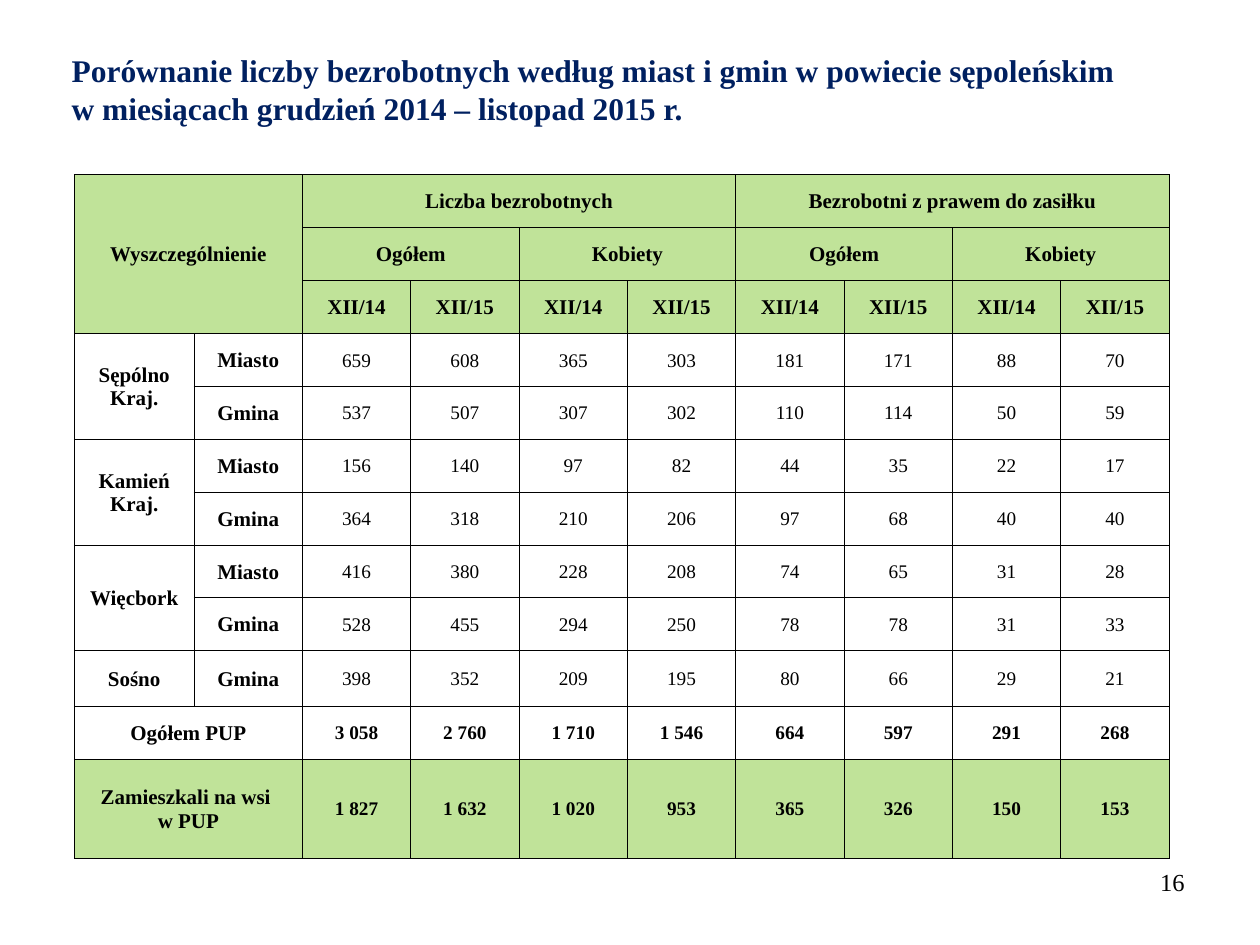
from lxml import etree
from pptx import Presentation
from pptx.dml.color import RGBColor
from pptx.enum.text import MSO_ANCHOR, PP_ALIGN
from pptx.oxml.ns import qn
from pptx.util import Emu, Inches, Pt

LEFT, CENTER, RIGHT = PP_ALIGN.LEFT, PP_ALIGN.CENTER, PP_ALIGN.RIGHT
MIDDLE = MSO_ANCHOR.MIDDLE

HEADER_ROWS = 3
LABEL_COLUMNS = 2
COLUMN_WIDTHS = [0.95] + [0.86] * 9
ROW_HEIGHTS = [0.42] * 9 + [0.44, 0.42, 0.79]

# Labels as (row, column, row span, column span, text)
HEADERS = [
    (0, 0, 3, 2, "Wyszczególnienie"),
    (0, 2, 1, 4, "Liczba bezrobotnych"),
    (0, 6, 1, 4, "Bezrobotni z prawem do zasiłku"),
]
HEADERS += [(1, 2 + 2 * i, 1, 2, ("Ogółem", "Kobiety")[i % 2]) for i in range(4)]
HEADERS += [(2, 2 + i, 1, 1, ("XII/14", "XII/15")[i % 2]) for i in range(8)]

ROW_LABELS = [
    (3, 0, 2, 1, "Sępólno Kraj."),
    (5, 0, 2, 1, "Kamień Kraj."),
    (7, 0, 2, 1, "Więcbork"),
    (9, 0, 1, 1, "Sośno"),
    (10, 0, 1, 2, "Ogółem PUP"),
    (11, 0, 1, 2, "Zamieszkali na wsi \nw PUP"),
]
KINDS = ["Miasto", "Gmina"] * 3 + ["Gmina"]
ROW_LABELS += [(3 + i, 1, 1, 1, kind) for i, kind in enumerate(KINDS)]

VALUES = [
    [659, 608, 365, 303, 181, 171, 88, 70],
    [537, 507, 307, 302, 110, 114, 50, 59],
    [156, 140, 97, 82, 44, 35, 22, 17],
    [364, 318, 210, 206, 97, 68, 40, 40],
    [416, 380, 228, 208, 74, 65, 31, 28],
    [528, 455, 294, 250, 78, 78, 31, 33],
    [398, 352, 209, 195, 80, 66, 29, 21],
    [3058, 2760, 1710, 1546, 664, 597, 291, 268],
    [1827, 1632, 1020, 953, 365, 326, 150, 153],
]


def color(value):
    return RGBColor.from_string(value)


class SlideBuilder:
    font = "Times New Roman"
    ink = "000000"
    navy = "002060"
    green = "C0E399"

    def __init__(self, presentation):
        self.presentation = presentation
        self.slide = presentation.slides.add_slide(presentation.slide_layouts[6])

    def place(self, left, top, width, height):
        """Turn shares of the slide's size into lengths."""
        across, down = self.presentation.slide_width, self.presentation.slide_height
        return [Emu(round(share * size)) for share, size in
                zip((left, top, width, height), (across, down, across, down))]

    def set_text(self, text_frame, text, size, bold, ink, align):
        paragraph = text_frame.paragraphs[0]
        paragraph.text = text
        paragraph.alignment = align
        for run in paragraph.runs:
            run.font.name = self.font
            run.font.size = Pt(size)
            run.font.bold = bold
            run.font.color.rgb = color(ink)

    def text(self, place, text, size, bold=False, ink=ink, align=LEFT):
        text_frame = self.slide.shapes.add_textbox(*self.place(*place)).text_frame
        text_frame.word_wrap = True
        self.set_text(text_frame, text, size, bold, ink, align)

    def table(self, place, column_widths, row_heights):
        table = self.slide.shapes.add_table(
            len(row_heights), len(column_widths), *self.place(*place)).table
        table.first_row = table.horz_banding = False
        for column, width in zip(table.columns, column_widths):
            column.width = Inches(width)
        for row, height in zip(table.rows, row_heights):
            row.height = Inches(height)
        return table

    def style_cell(self, cell, filled):
        cell.margin_left = cell.margin_right = cell.margin_top = Inches(0.01)
        cell.margin_bottom = 0
        cell.vertical_anchor = MIDDLE
        properties = cell._tc.get_or_add_tcPr()
        for side in ("a:lnL", "a:lnR", "a:lnT", "a:lnB"):
            line = etree.SubElement(properties, qn(side), w=str(Pt(0.5)))
            fill = etree.SubElement(line, qn("a:solidFill"))
            etree.SubElement(fill, qn("a:srgbClr"), val=self.ink)
        if filled:
            cell.fill.solid()
            cell.fill.fore_color.rgb = color(self.green)
        else:
            cell.fill.background()

    def label(self, table, row, column, row_span, column_span, text):
        cell = table.cell(row, column)
        if row_span * column_span > 1:
            cell.merge(table.cell(row + row_span - 1, column + column_span - 1))
        self.set_text(cell.text_frame, text, 12, True, self.ink, CENTER)

    def value(self, table, row, column, number, bold):
        text = f"{number:,}".replace(",", " ")
        self.set_text(table.cell(row, column).text_frame, text, 11, bold, self.ink, CENTER)


def main():
    presentation = Presentation()
    presentation.slide_width, presentation.slide_height = Inches(10), Inches(7.5)
    builder = SlideBuilder(presentation)

    # Title
    builder.text((0.047, 0.048, 0.878, 0.093),
                 "Porównanie liczby bezrobotnych według miast i gmin w powiecie sępoleńskim\n"
                 "w miesiącach grudzień 2014 – listopad 2015 r.",
                 18, bold=True, ink=builder.navy)

    # Table grid: green header and last row
    table = builder.table((0.059, 0.185, 0.866, 0.724), COLUMN_WIDTHS, ROW_HEIGHTS)
    last_row = len(ROW_HEIGHTS) - 1
    for i, row in enumerate(table.rows):
        for cell in row.cells:
            builder.style_cell(cell, filled=i < HEADER_ROWS or i == last_row)

    # Labels and values; the two summary rows are bold
    for label in HEADERS + ROW_LABELS:
        builder.label(table, *label)
    for i, numbers in enumerate(VALUES, HEADER_ROWS):
        for j, number in enumerate(numbers, LABEL_COLUMNS):
            builder.value(table, i, j, number, bold=i >= last_row - 1)

    # Page number
    builder.text((0.717, 0.911, 0.233, 0.069), "16", 14, align=RIGHT)

    presentation.save("out.pptx")


if __name__ == "__main__":
    main()
